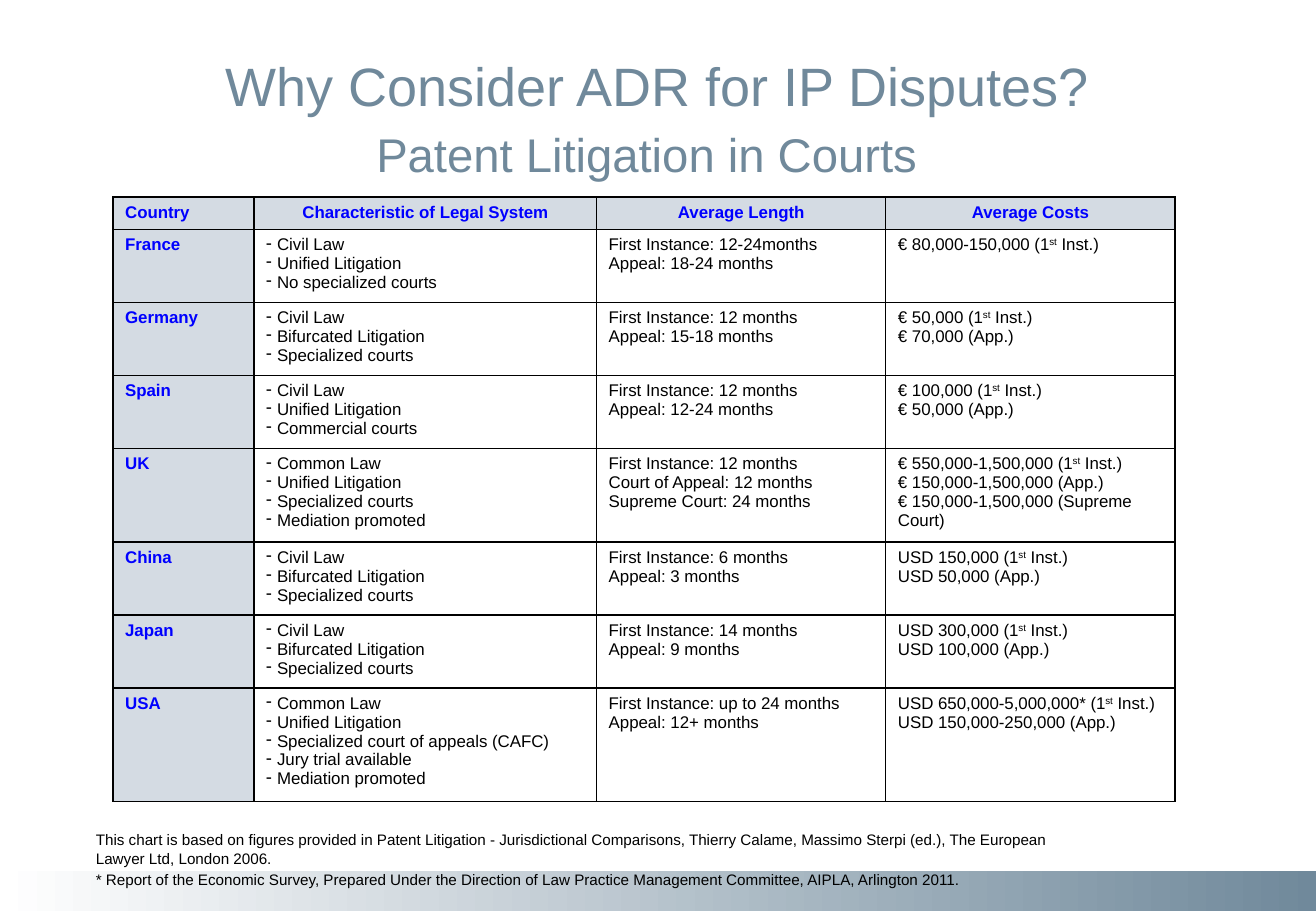
from lxml.etree import SubElement
from pptx import Presentation
from pptx.dml.color import RGBColor
from pptx.enum.shapes import MSO_SHAPE
from pptx.enum.text import MSO_ANCHOR, MSO_AUTO_SIZE, PP_ALIGN
from pptx.oxml.ns import qn
from pptx.util import Inches, Pt

SLATE, PALE, BLUE, BLACK, WHITE = "70899B", "D4DBE3", "0000FF", "000000", "FFFFFF"

COLUMN_WIDTHS = [1.16, 2.82, 2.38, 2.38]
ROW_HEIGHTS = [0.27, 0.6, 0.6, 0.6, 0.77, 0.6, 0.6, 0.93]
HEADERS = ["Country", "Characteristic of Legal System", "Average Length", "Average Costs"]
# In costs, ^ marks the start and end of a superscript.
COUNTRIES = [
    ("France",
     ["Civil Law", "Unified Litigation", "No specialized courts"],
     ["First Instance: 12-24months", "Appeal: 18-24 months"],
     ["€ 80,000-150,000 (1^st^ Inst.)"]),
    ("Germany",
     ["Civil Law", "Bifurcated Litigation", "Specialized courts"],
     ["First Instance: 12 months", "Appeal: 15-18 months"],
     ["€ 50,000 (1^st^ Inst.)", "€ 70,000 (App.)"]),
    ("Spain",
     ["Civil Law", "Unified Litigation", "Commercial courts"],
     ["First Instance: 12 months", "Appeal: 12-24 months"],
     ["€ 100,000 (1^st^ Inst.)", "€ 50,000 (App.)"]),
    ("UK",
     ["Common Law", "Unified Litigation", "Specialized courts", "Mediation promoted"],
     ["First Instance: 12 months", "Court of Appeal: 12 months", "Supreme Court: 24 months"],
     ["€ 550,000-1,500,000 (1^st^ Inst.)", "€ 150,000-1,500,000 (App.)",
      "€ 150,000-1,500,000 (Supreme Court)"]),
    ("China",
     ["Civil Law", "Bifurcated Litigation", "Specialized courts"],
     ["First Instance: 6 months", "Appeal: 3 months"],
     ["USD 150,000 (1^st^ Inst.)", "USD 50,000 (App.)"]),
    ("Japan",
     ["Civil Law", "Bifurcated Litigation", "Specialized courts"],
     ["First Instance: 14 months", "Appeal: 9 months"],
     ["USD 300,000 (1^st^ Inst.)", "USD 100,000 (App.)"]),
    ("USA",
     ["Common Law", "Unified Litigation", "Specialized court of appeals (CAFC)",
      "Jury trial available", "Mediation promoted"],
     ["First Instance: up to 24 months", "Appeal: 12+ months"],
     ["USD 650,000-5,000,000* (1^st^ Inst.)", "USD 150,000-250,000 (App.)"]),
]
FOOTNOTES = [
    "This chart is based on figures provided in Patent Litigation - Jurisdictional Comparisons, "
    "Thierry Calame, Massimo Sterpi (ed.), The European Lawyer Ltd, London 2006.",
    "* Report of the Economic Survey, Prepared Under the Direction of Law Practice Management "
    "Committee, AIPLA, Arlington 2011.",
]


def rgb(color):
    return RGBColor.from_string(color)


def add_dash(p):
    pPr = p._p.get_or_add_pPr()
    indent = Inches(0.09)
    pPr.set("marL", str(indent))
    pPr.set("indent", str(-indent))
    SubElement(pPr, qn("a:buChar")).set("char", "-")


def write(tf, lines, size, color, bold=False, align=PP_ALIGN.LEFT, dashed=False, gap=0):
    tf.word_wrap = True
    for i, line in enumerate(lines):
        p = tf.add_paragraph() if i else tf.paragraphs[0]
        p.alignment = align
        if i and gap:
            p.space_before = Pt(gap)
        if dashed:
            add_dash(p)
        for j, text in enumerate(line.split("^")):
            r = p.add_run()
            r.text = text
            r.font.name = "Arial"
            r.font.size = Pt(size)
            r.font.bold = bold
            r.font.color.rgb = rgb(color)
            if j % 2:
                r._r.get_or_add_rPr().set("baseline", "30000")


def place(sp, left, top, width, height):
    sp.left, sp.top = Inches(left), Inches(top)
    sp.width, sp.height = Inches(width), Inches(height)


def add_title(s, text):
    sp = s.shapes.title
    place(sp, 0, 0.36, 10.83, 0.68)
    tf = sp.text_frame
    tf.auto_size = MSO_AUTO_SIZE.NONE
    tf.vertical_anchor = MSO_ANCHOR.MIDDLE
    write(tf, [text], 32, SLATE, align=PP_ALIGN.CENTER)


def add_text(s, box, lines, size, color, anchor=MSO_ANCHOR.TOP, **style):
    tf = s.shapes.add_textbox(*map(Inches, box)).text_frame
    tf.vertical_anchor = anchor
    write(tf, lines, size, color, **style)


def add_footer_band(s):
    sp = s.shapes.add_shape(MSO_SHAPE.RECTANGLE, *map(Inches, (0, 7.17, 10.83, 0.33)))
    sp.shadow.inherit = False
    sp.line.fill.background()
    sp.fill.gradient()
    sp.fill.gradient_angle = 0
    for stop, color in zip(sp.fill.gradient_stops, (WHITE, SLATE)):
        stop.color.rgb = rgb(color)


def add_borders(cell):
    tcPr = cell._tc.get_or_add_tcPr()
    for side in ("lnL", "lnR", "lnT", "lnB"):
        ln = SubElement(tcPr, qn(f"a:{side}"), w=str(Pt(1)))
        fill = SubElement(ln, qn("a:solidFill"))
        SubElement(fill, qn("a:srgbClr")).set("val", BLACK)


def fill_cell(cell, lines, shaded, **style):
    add_borders(cell)
    if shaded:
        cell.fill.solid()
        cell.fill.fore_color.rgb = rgb(PALE)
    else:
        cell.fill.background()
    write(cell.text_frame, lines, 10, BLUE if shaded else BLACK, bold=shaded, **style)


def add_litigation_table(s):
    box = (0.93, 1.62, sum(COLUMN_WIDTHS), sum(ROW_HEIGHTS))
    table = s.shapes.add_table(len(ROW_HEIGHTS), len(COLUMN_WIDTHS), *map(Inches, box)).table
    table.horz_banding = False
    for column, width in zip(table.columns, COLUMN_WIDTHS):
        column.width = Inches(width)
    for row, height in zip(table.rows, ROW_HEIGHTS):
        row.height = Inches(height)
    for c, header in enumerate(HEADERS):
        align = PP_ALIGN.CENTER if c else PP_ALIGN.LEFT
        fill_cell(table.cell(0, c), [header], True, align=align)
    for r, (country, *details) in enumerate(COUNTRIES, 1):
        fill_cell(table.cell(r, 0), [country], True)
        for c, lines in enumerate(details, 1):
            fill_cell(table.cell(r, c), lines, False, dashed=c == 1)


def main():
    prs = Presentation()
    prs.slide_width, prs.slide_height = Inches(10.83), Inches(7.5)
    s = prs.slides.add_slide(prs.slide_layouts[5])
    add_footer_band(s)
    add_title(s, "Why Consider ADR for IP Disputes?")
    add_text(s, (1.45, 0.91, 7.74, 0.71), ["Patent Litigation in Courts"], 28, SLATE,
             anchor=MSO_ANCHOR.MIDDLE, align=PP_ALIGN.CENTER)
    add_litigation_table(s)
    add_text(s, (0.69, 6.79, 8.28, 0.59), FOOTNOTES, 9, BLACK, gap=2)
    prs.save("out.pptx")


if __name__ == "__main__":
    main()
